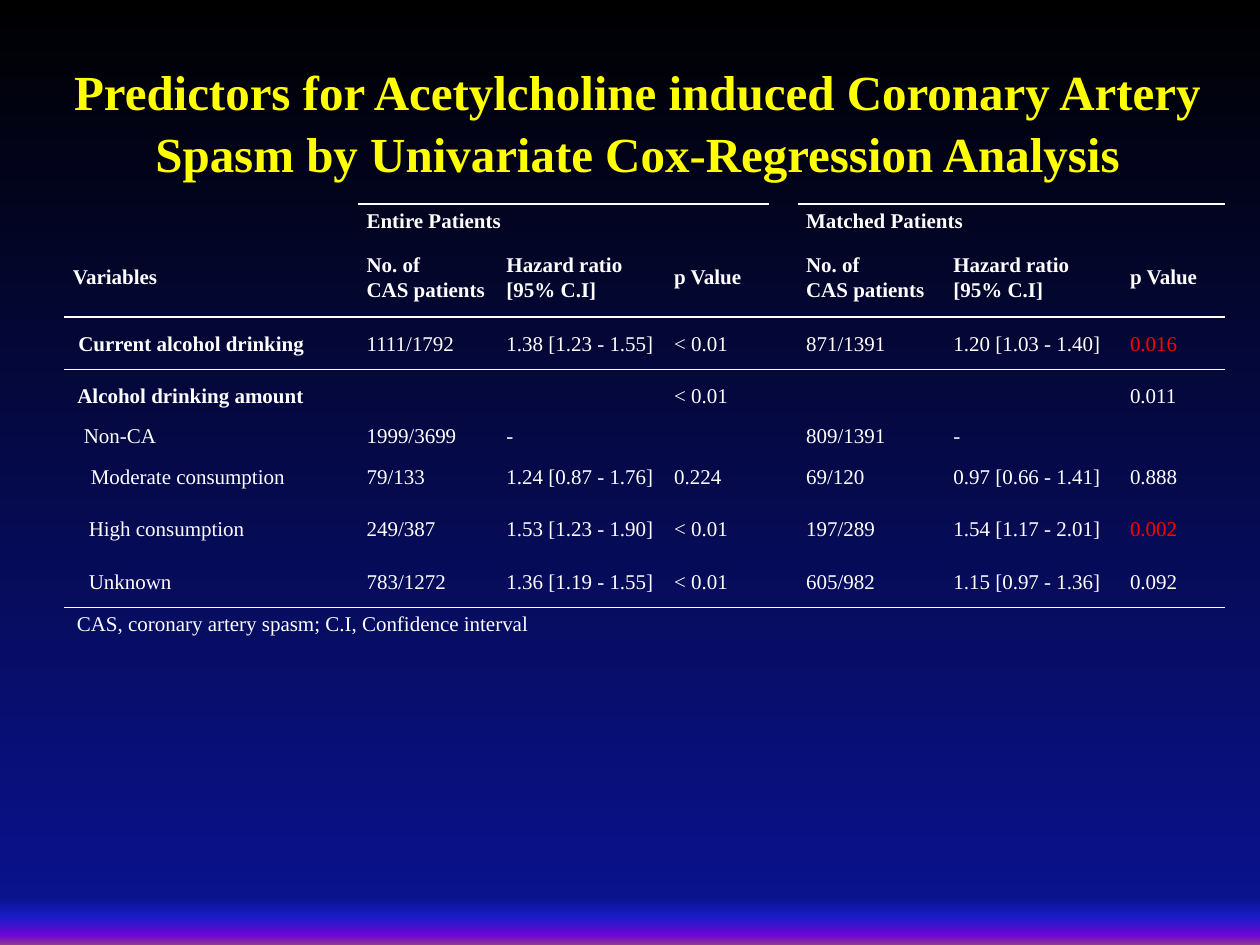
from dataclasses import dataclass

from lxml import etree
from pptx import Presentation
from pptx.dml.color import RGBColor
from pptx.enum import text as t
from pptx.oxml.ns import qn
from pptx.util import Cm, Pt


@dataclass(frozen=True)
class Theme:
    font: str = "Times New Roman"
    title: str = "FFFF00"
    text: str = "FFFFFF"
    significant: str = "FF0000"
    title_size: int = 28
    body_size: int = 12
    background: tuple = ((0, "000000"), (95, "0A128C"), (97, "181CC7"),
                         (99, "7005D4"), (100, "8C3D91"))


THEME = Theme()
PLAIN_TABLE = "{2D5ABB26-0587-4C30-8999-92F81FD0307C}"


def write(frame, text, size=THEME.body_size, color=THEME.text, bold=False,
          align=t.PP_ALIGN.LEFT, spacing=1.07, after=0):
    para = frame.paragraphs[0]
    para.alignment = align
    para.line_spacing = spacing
    para.space_after = Pt(after)
    if not text:
        etree.SubElement(para._p, qn("a:endParaRPr"), sz=str(size * 100))
        return
    for number, line in enumerate(text.split("\n")):
        if number:
            para.add_line_break()
        span = para.add_run()
        span.text = line
        span.font.name = THEME.font
        span.font.size = Pt(size)
        span.font.bold = bold
        span.font.color.rgb = RGBColor.from_string(color)


def add_border(cell, side):
    """Draw a 1 pt rule on one side of the cell: "T" or "B"."""
    line = etree.SubElement(cell._tc.get_or_add_tcPr(), qn(f"a:ln{side}"), w=str(Pt(1)))
    fill = etree.SubElement(line, qn("a:solidFill"))
    etree.SubElement(fill, qn("a:srgbClr"), val=THEME.text)


deck = Presentation()
deck.slide_width, deck.slide_height = Cm(25.4), Cm(19.05)
page = deck.slides.add_slide(deck.slide_layouts[6])

# Background
backdrop = page.background.fill
backdrop.gradient()
backdrop.gradient_angle = 270
stops = page._element.find(".//" + qn("a:gsLst"))
for stop in list(stops):
    stops.remove(stop)
for position, color in THEME.background:
    stop = etree.SubElement(stops, qn("a:gs"), pos=str(position * 1000))
    etree.SubElement(stop, qn("a:srgbClr"), val=color)

# Title
title = page.shapes.add_textbox(Cm(0.3), Cm(0.76), Cm(25.1), Cm(3.35)).text_frame
title.word_wrap = True
title.vertical_anchor = t.MSO_ANCHOR.MIDDLE
write(title, "Predictors for Acetylcholine induced Coronary Artery "
      "Spasm by Univariate Cox-Regression Analysis", size=THEME.title_size,
      color=THEME.title, bold=True, align=t.PP_ALIGN.CENTER, spacing=1.05)

# Table
group_heads = ["No. of\nCAS patients", "Hazard ratio\n[95% C.I]", "p Value"]
rows = [
    ["", "Entire Patients", "", "", "", "Matched Patients", "", ""],
    ["Variables", *group_heads, "", *group_heads],
    ["Current alcohol drinking", "1111/1792", "1.38 [1.23 - 1.55]", "< 0.01", "",
     "871/1391", "1.20 [1.03 - 1.40]", "0.016"],
    ["Alcohol drinking amount", "", "", "< 0.01", "", "", "", "0.011"],
    ["Non-CA", "1999/3699", "-", "", "", "809/1391", "-", ""],
    ["Moderate consumption", "79/133", "1.24 [0.87 - 1.76]", "0.224", "",
     "69/120", "0.97 [0.66 - 1.41]", "0.888"],
    ["High consumption", "249/387", "1.53 [1.23 - 1.90]", "< 0.01", "",
     "197/289", "1.54 [1.17 - 2.01]", "0.002"],
    ["Unknown", "783/1272", "1.36 [1.19 - 1.55]", "< 0.01", "",
     "605/982", "1.15 [0.97 - 1.36]", "0.092"],
]
column_widths = [5.92, 2.82, 3.38, 2.08, 0.58, 2.97, 3.56, 2.08]
row_heights = [0.67, 1.61, 1.06, 1.06, 0.56, 1.06, 1.06, 1.06]
label_indents = [0, 0, 0.11, 0.09, 0.22, 0.36, 0.32, 0.32]
gap_column = 4
significant = {(2, 7), (6, 7)}
bold_labels = {(2, 0), (3, 0)}

table = page.shapes.add_table(len(rows), len(column_widths), Cm(1.3), Cm(4.11),
                              Cm(sum(column_widths)), Cm(sum(row_heights))).table
table.first_row = table.horz_banding = False
table._tbl.tblPr.find(qn("a:tableStyleId")).text = PLAIN_TABLE
for column, width in zip(table.columns, column_widths):
    column.width = Cm(width)
for row, height in zip(table.rows, row_heights):
    row.height = Cm(height)

for r, values in enumerate(rows):
    for c, value in enumerate(values):
        cell = table.cell(r, c)
        cell.margin_left = Cm(0.17 + (label_indents[r] if c == 0 else 0))
        cell.margin_right = Cm(0.17)
        cell.margin_top = cell.margin_bottom = 0
        cell.vertical_anchor = t.MSO_ANCHOR.MIDDLE
        if r == 2 or (r == 0 and c not in (0, gap_column)):
            add_border(cell, "T")
        if r in (1, len(rows) - 1):
            add_border(cell, "B")
        cell.fill.background()
        write(cell.text_frame, value, bold=r < 2 or (r, c) in bold_labels,
              color=THEME.significant if (r, c) in significant else THEME.text)

for first in (1, 5):
    table.cell(0, first).merge(table.cell(0, first + 1))

# Abbreviations
note = page.shapes.add_textbox(Cm(1.3), Cm(12.14), Cm(9.73), Cm(0.76)).text_frame
note.word_wrap = False
note.auto_size = t.MSO_AUTO_SIZE.SHAPE_TO_FIT_TEXT
write(note, "CAS, coronary artery spasm; C.I, Confidence interval", after=8)

deck.save("out.pptx")
